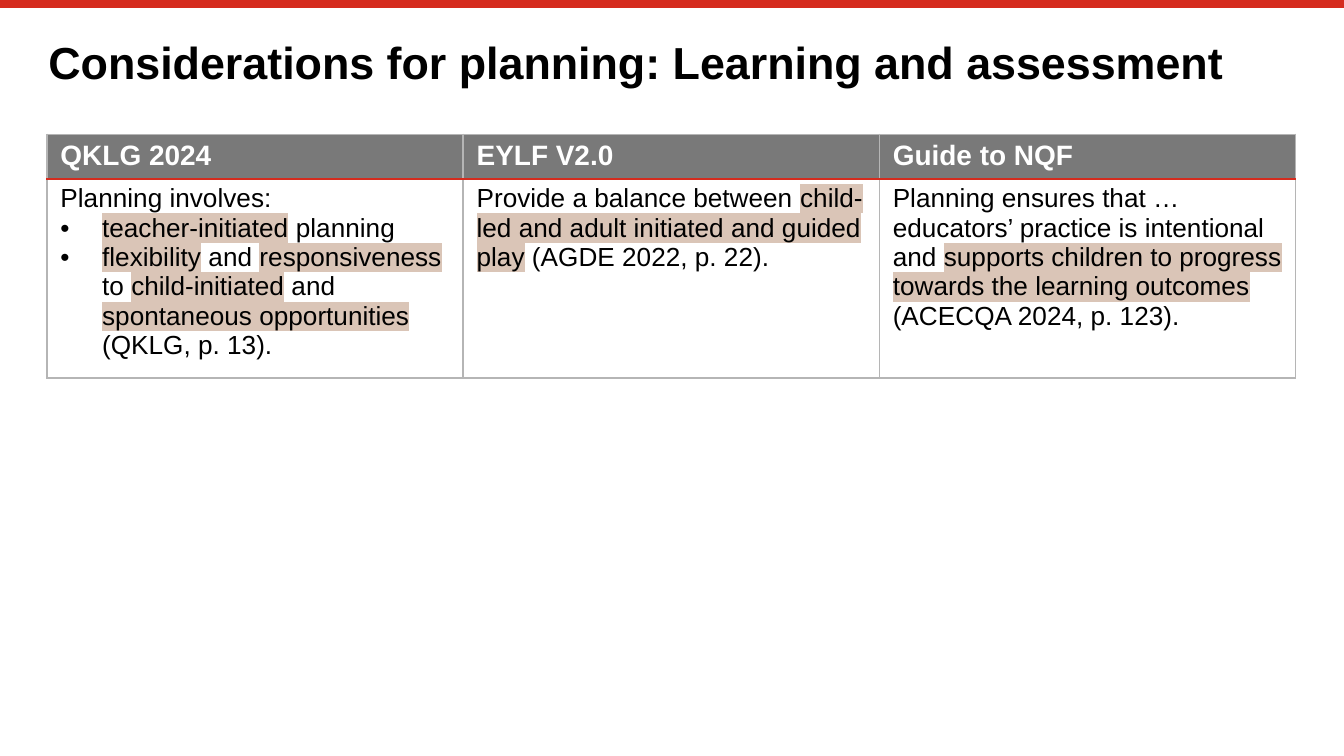
"""Build the slide comparing learning and assessment planning guidance."""
from lxml import etree
from pptx import Presentation
from pptx.dml.color import RGBColor
from pptx.enum.shapes import MSO_CONNECTOR
from pptx.enum.text import MSO_ANCHOR
from pptx.oxml.ns import qn
from pptx.util import Inches, Pt

TITLE = "Considerations for planning: Learning and assessment"
HEADINGS = ["QKLG 2024", "EYLF V2.0", "Guide to NQF"]
PLAIN, MARKED = False, True
GUIDANCE = [
    [
        (False, [("Planning involves:", PLAIN)]),
        (True, [("teacher-initiated", MARKED), (" planning", PLAIN)]),
        (True, [
            ("flexibility", MARKED), (" and ", PLAIN),
            ("responsiveness", MARKED), (" to ", PLAIN),
            ("child-initiated", MARKED), (" and ", PLAIN),
            ("spontaneous opportunities ", MARKED), ("(QKLG, p. 13).", PLAIN),
        ]),
    ],
    [(False, [
        ("Provide a balance between ", PLAIN),
        ("child-led and adult initiated and guided play", MARKED),
        (" (AGDE 2022, p. 22).", PLAIN),
    ])],
    [(False, [
        ("Planning ensures that … educators’ practice is intentional and ", PLAIN),
        ("supports children to progress towards the learning outcomes", MARKED),
        (" (ACECQA 2024, p. 123).", PLAIN),
    ])],
]
COLORS = {"red": "D52B1E", "header": "797979", "grid": "B5B5B5",
          "mark": "DAC5B7", "text": "000000", "white": "FFFFFF"}
ROW_HEIGHTS = [0.32, 1.39]
TABLE_WIDTH = 9.29


def rgb(name):
    return RGBColor.from_string(COLORS[name])


def add_color(parent, tag, name):
    holder = etree.SubElement(parent, qn(tag))
    etree.SubElement(holder, qn("a:srgbClr"), val=COLORS[name])


def set_font(font, size, color, bold):
    font.name, font.size, font.bold = "Arial", Pt(size), bold
    font.color.rgb = rgb(color)


def add_bullet(paragraph):
    properties = paragraph._p.get_or_add_pPr()
    properties.set("marL", str(Inches(0.31)))
    properties.set("indent", str(-Inches(0.31)))
    etree.SubElement(properties, qn("a:buFont"), typeface="Arial")
    etree.SubElement(properties, qn("a:buChar"), char="•")


def set_borders(cell, top, bottom):
    properties = cell._tc.get_or_add_tcPr()
    sides = {"L": "grid", "R": "grid", "T": top, "B": bottom}
    for position, (side, color) in enumerate(sides.items()):
        width = Pt(1.5 if color == "red" else 1)
        border = etree.Element(qn(f"a:ln{side}"), w=str(width))
        add_color(border, "a:solidFill", color)
        properties.insert(position, border)


def fill_cell(cell, paragraphs, size, color, bold):
    cell.margin_left = cell.margin_right = Inches(0.1)
    cell.margin_top = cell.margin_bottom = Inches(0.04)
    frame = cell.text_frame
    for index, (bulleted, parts) in enumerate(paragraphs):
        paragraph = frame.add_paragraph() if index else frame.paragraphs[0]
        if bulleted:
            add_bullet(paragraph)
        paragraph.space_before = Pt(0)
        for text, marked in parts:
            run = paragraph.add_run()
            run.text = text
            if marked:
                add_color(run._r.get_or_add_rPr(), "a:highlight", "mark")
            set_font(run.font, size, color, bold)


def add_top_rule(slide):
    rule = slide.shapes.add_connector(
        MSO_CONNECTOR.STRAIGHT, 0, Inches(0.03), Inches(10), Inches(0.03))
    rule.line.color.rgb = rgb("red")
    rule.line.width = Pt(4.2)
    etree.SubElement(rule._element.spPr, qn("a:effectLst"))


def add_title(slide):
    frame = slide.shapes.add_textbox(
        Inches(0.36), Inches(0.3), Inches(9.29), Inches(0.39)).text_frame
    frame.word_wrap = True
    frame.vertical_anchor = MSO_ANCHOR.TOP
    frame.margin_left = frame.margin_right = 0
    frame.margin_top = frame.margin_bottom = 0
    title = frame.paragraphs[0]
    title.text = TITLE
    title.line_spacing = 0.9
    set_font(title.font, 24, "text", True)


def add_guidance_table(slide):
    table = slide.shapes.add_table(
        len(ROW_HEIGHTS), len(HEADINGS), Inches(0.35), Inches(1),
        Inches(TABLE_WIDTH), Inches(sum(ROW_HEIGHTS))).table
    table.horz_banding = False
    for row, height in zip(table.rows, ROW_HEIGHTS):
        row.height = Inches(height)
    for column, (heading, guidance) in enumerate(zip(HEADINGS, GUIDANCE)):
        header, body = table.cell(0, column), table.cell(1, column)
        fill_cell(header, [(False, [(heading, PLAIN)])], 15, "white", True)
        header.fill.solid()
        header.fill.fore_color.rgb = rgb("header")
        set_borders(header, "grid", "red")
        fill_cell(body, guidance, 14, "text", False)
        body.fill.background()
        set_borders(body, "red", "grid")


def main():
    presentation = Presentation()
    presentation.slide_width = Inches(10)
    presentation.slide_height = Inches(10) * 9 // 16
    slide = presentation.slides.add_slide(presentation.slide_layouts[6])
    add_top_rule(slide)
    add_title(slide)
    add_guidance_table(slide)
    presentation.save("out.pptx")


if __name__ == "__main__":
    main()
